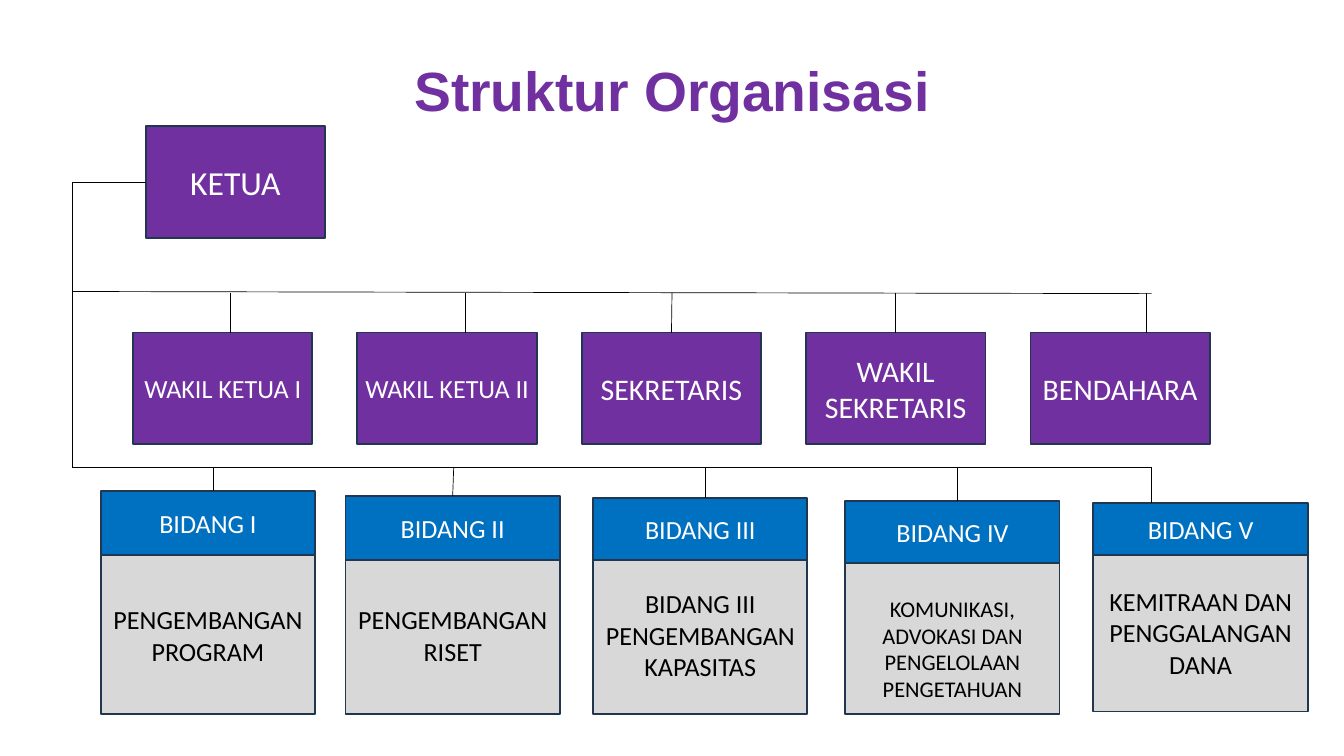
from pptx import Presentation
from pptx.dml.color import RGBColor
from pptx.enum.shapes import MSO_CONNECTOR, MSO_SHAPE
from pptx.enum.text import MSO_ANCHOR, MSO_AUTO_SIZE, PP_ALIGN
from pptx.oxml.ns import qn
from pptx.util import Cm, Pt
from lxml.etree import SubElement

COLORS = {
    "purple": "7030A0",
    "blue": "0070C0",
    "gray": "D8D8D8",
    "border": "21364F",
    "white": "FFFFFF",
    "black": "000000",
}
TOP = 0  # connection site at the middle of the top side
LEFT = 1

OFFICER_LEFT, OFFICER_TOP, OFFICER_PITCH = 5.03, 12.57, 8.48
OFFICER_WIDTH, OFFICER_HEIGHT = 6.78, 4.22
DIVISION_WIDTH, DIVISION_HEIGHT = 8.1, 6
SPINE_X, BRANCH_RIGHT = 2.74, 43.53
CHAIR_Y, OFFICER_BAR_Y, DIVISION_BAR_Y = 6.89, 11.08, 17.68

# name, text size, x of the line above
OFFICERS = [
    ("WAKIL KETUA I", 28, 8.69),
    ("WAKIL KETUA II", 28, 17.58),
    ("SEKRETARIS", 32, 25.4),
    ("WAKIL SEKRETARIS", 32, 33.86),
    ("BENDAHARA", 32, 43.33),
]

# header, task, text size, top inset, left, task top, header top, header height, x of the line above
DIVISIONS = [
    ("BIDANG I", "PENGEMBANGAN PROGRAM", 28, 0.13, 3.81, 21, 18.57, 2.41, 8.05),
    ("BIDANG II", "PENGEMBANGAN RISET", 28, 0.13, 13.06, 21, 18.75, 2.41, 17.15),
    ("BIDANG III", "BIDANG III\nPENGEMBANGAN KAPASITAS", 28, 0.13, 22.42, 21, 18.82, 2.34, 26.67),
    ("BIDANG IV", "KOMUNIKASI, ADVOKASI DAN PENGELOLAAN PENGETAHUAN", 24, 1.16,
     31.95, 21, 18.95, 2.34, 36.2),
    ("BIDANG V", "KEMITRAAN DAN PENGGALANGAN DANA", 28, 0.13, 41.33, 20.9, 19.02, 1.96, 43.53),
]


def rgb(color):
    return RGBColor.from_string(COLORS[color])


def write(frame, text, *, size, color, font="Calibri", bold=False, spacing=None):
    """Fill a text frame with centred paragraphs, one for each line of text."""
    frame.word_wrap = True
    frame.auto_size = MSO_AUTO_SIZE.NONE
    frame.text = text
    for paragraph in frame.paragraphs:
        paragraph.alignment = PP_ALIGN.CENTER
        if spacing:
            paragraph.line_spacing = spacing
        for run in paragraph.runs:
            run.font.name = font
            run.font.size = Pt(size)
            run.font.bold = bold
            run.font.color.rgb = rgb(color)


class OrgChart:
    def __init__(self, slide, border_width=2, line_width=0.75):
        self.slide = slide
        self.border_width = Pt(border_width)
        self.line_width = Pt(line_width)

    def title(self, text):
        title = self.slide.shapes.title
        title.left, title.top, title.width, title.height = Cm(4.98), Cm(2.24), Cm(40.84), Cm(2.51)
        frame = title.text_frame
        frame.margin_left = frame.margin_right = frame.margin_top = frame.margin_bottom = 0
        frame.vertical_anchor = MSO_ANCHOR.TOP
        write(frame, text, size=59.2, color="purple", font="Arial", bold=True, spacing=0.99)

    def box(self, text, left, top, width, height, *, fill, size, color="white", inset_top=0.13):
        box = self.slide.shapes.add_shape(
            MSO_SHAPE.RECTANGLE, Cm(left), Cm(top), Cm(width), Cm(height))
        box.shadow.inherit = False
        box.fill.solid()
        box.fill.fore_color.rgb = rgb(fill)
        box.line.color.rgb = rgb("border")
        box.line.width = self.border_width
        frame = box.text_frame
        frame.vertical_anchor = MSO_ANCHOR.MIDDLE
        frame.margin_top = Cm(inset_top)
        write(frame, text, size=size, color=color)
        return box

    def line(self, x1, y1, x2, y2):
        line = self.slide.shapes.add_connector(
            MSO_CONNECTOR.STRAIGHT, Cm(x1), Cm(y1), Cm(x2), Cm(y2))
        line.line.color.rgb = rgb("black")
        line.line.width = self.line_width
        SubElement(line._element.spPr, qn("a:effectLst"))
        return line

    def drop(self, x, bar_y, box):
        """Hang a box from a bar, joined where the line meets the middle of its top."""
        line = self.line(x, bar_y, x, box.top.cm if hasattr(box.top, "cm") else box.top / Cm(1))
        if abs(box.left + box.width / 2 - Cm(x)) < Cm(0.1):
            line.end_connect(box, TOP)


def main():
    presentation = Presentation()
    presentation.slide_width, presentation.slide_height = Cm(50.8), Cm(28.58)
    title_only = presentation.slide_layouts[5]
    chart = OrgChart(presentation.slides.add_slide(title_only))

    chart.title("Struktur Organisasi")
    chair = chart.box("KETUA", 5.51, 4.78, OFFICER_WIDTH, OFFICER_HEIGHT, fill="purple", size=36)

    chart.line(5.51, CHAIR_Y, SPINE_X, CHAIR_Y).begin_connect(chair, LEFT)
    chart.line(SPINE_X, CHAIR_Y, SPINE_X, DIVISION_BAR_Y)
    chart.line(SPINE_X, OFFICER_BAR_Y - 0.06, BRANCH_RIGHT, OFFICER_BAR_Y + 0.02)
    chart.line(SPINE_X, DIVISION_BAR_Y, BRANCH_RIGHT, DIVISION_BAR_Y)

    for column, (name, size, line_x) in enumerate(OFFICERS):
        officer = chart.box(name, OFFICER_LEFT + column * OFFICER_PITCH, OFFICER_TOP,
                            OFFICER_WIDTH, OFFICER_HEIGHT, fill="purple", size=size)
        chart.drop(line_x, OFFICER_BAR_Y, officer)

    for name, task, size, inset, left, task_top, top, height, line_x in DIVISIONS:
        chart.box(task, left, task_top, DIVISION_WIDTH, DIVISION_HEIGHT,
                  fill="gray", size=size, color="black", inset_top=inset)
        header = chart.box(name, left, top, DIVISION_WIDTH, height, fill="blue", size=28)
        chart.drop(line_x, DIVISION_BAR_Y, header)

    presentation.save("out.pptx")


if __name__ == "__main__":
    main()
